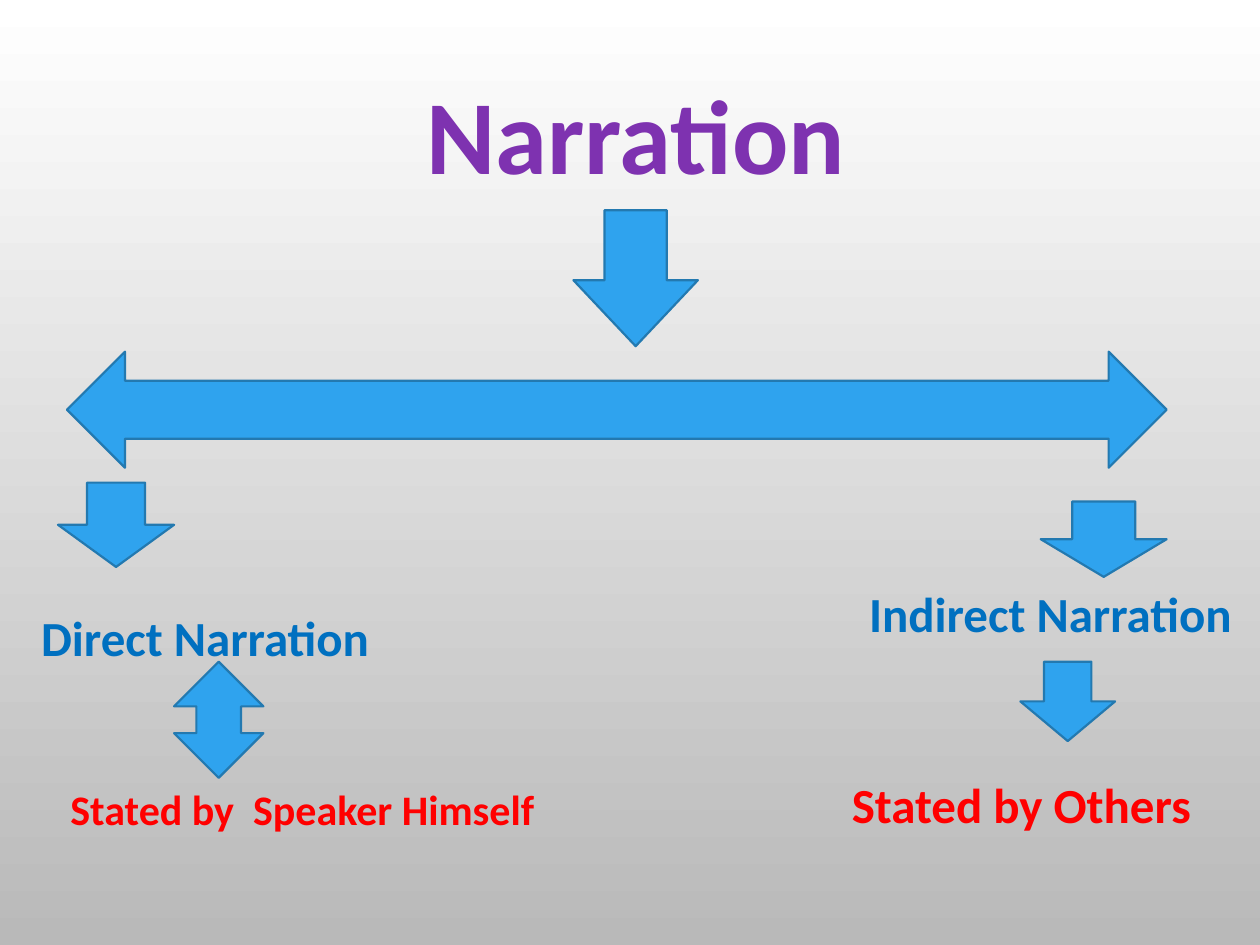
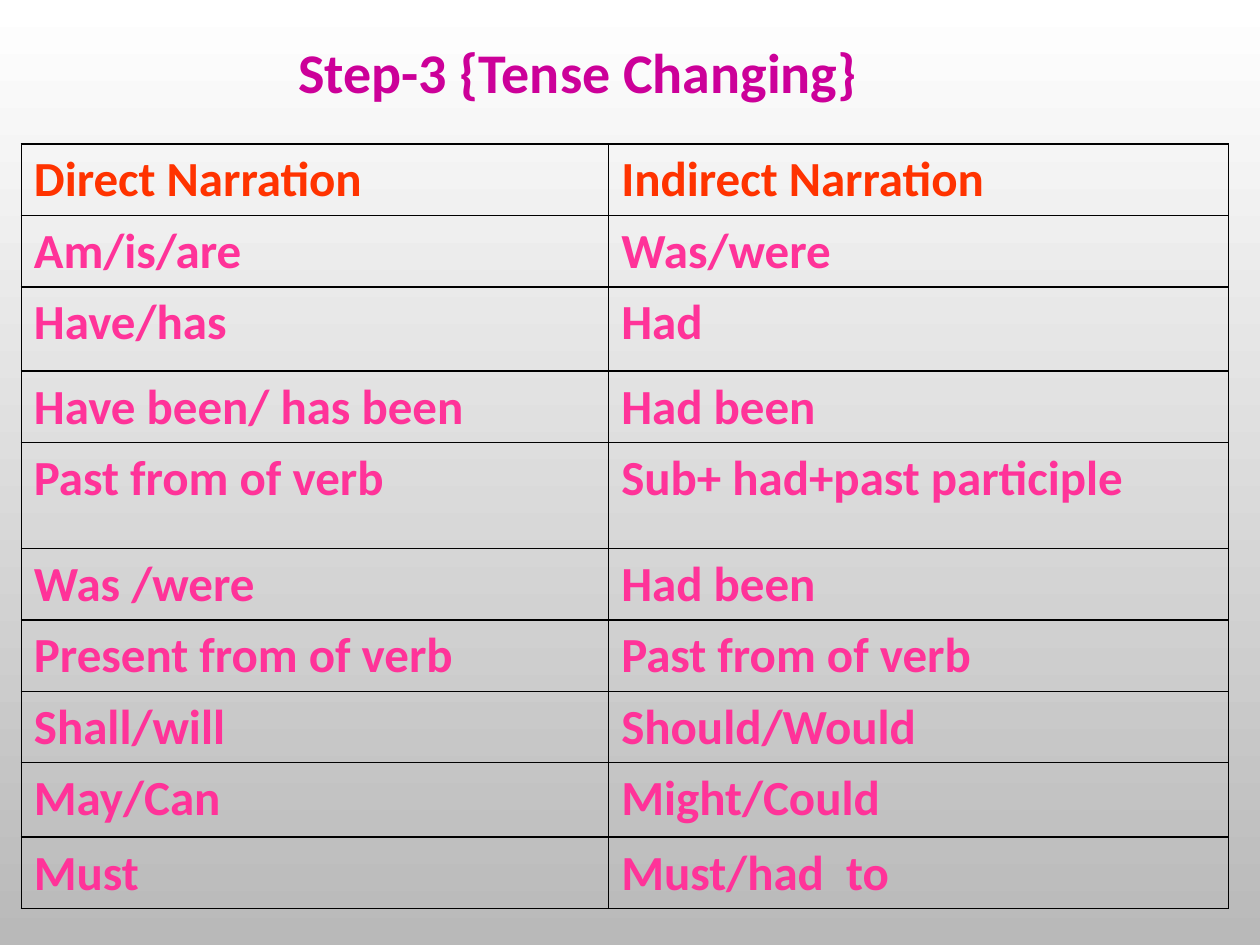
from dataclasses import dataclass

from lxml import etree
from pptx import Presentation
from pptx import util as u
from pptx.dml.color import RGBColor
from pptx.enum import shapes, text
from pptx.oxml.ns import qn

MS = shapes.MSO_SHAPE


@dataclass(frozen=True)
class Theme:
    font: str = "Calibri"
    bg: tuple = ("FFFFFF", "B9B9B9")
    arrow: str = "2FA3EE"
    arrow_line: str = "2379B0"
    topic: str = "7E32B0"
    branch: str = "0070C0"
    meaning: str = "FF0000"
    step: str = "CC0099"
    header: str = "FF3300"
    cell: str = "FF3399"
    border: str = "000000"
    topic_size: int = 60
    step_size: int = 32
    body_size: int = 28
    small_size: int = 24


T = Theme()

TENSES = [
    ("Direct Narration", "Indirect Narration"),
    ("Am/is/are", "Was/were"),
    ("Have/has", "Had"),
    ("Have been/ has been", "Had been"),
    ("Past from of verb", "Sub+ had+past participle"),
    ("Was /were", "Had been"),
    ("Present from of verb", "Past from of verb"),
    ("Shall/will", "Should/Would"),
    ("May/Can", "Might/Could"),
    ("Must", "Must/had  to"),
]


# Shared helpers: boxes are (left, top, width, height) in centimetres
def cm(box):
    return [u.Cm(v) for v in box]


def within(box, dx, dy, w, h):
    return box[0] + dx, box[1] + dy, w, h


def write(tf, words, size, color, align=text.PP_ALIGN.LEFT):
    p = tf.paragraphs[0]
    p.alignment = align
    r = p.add_run()
    r.text = words
    for name, value in {"name": T.font, "size": u.Pt(size), "bold": True}.items():
        setattr(r.font, name, value)
    r.font.color.rgb = RGBColor.from_string(color)


def label(s, box, words, size, color, align=text.PP_ALIGN.LEFT):
    tf = s.shapes.add_textbox(*cm(box)).text_frame
    tf.word_wrap = True
    write(tf, words, size, color, align)


def arrow(s, kind, box, adjustments=()):
    sp = s.shapes.add_shape(kind, *cm(box))
    sp.shadow.inherit = False
    sp.fill.solid()
    sp.fill.fore_color.rgb = RGBColor.from_string(T.arrow)
    sp.line.color.rgb = RGBColor.from_string(T.arrow_line)
    sp.line.width = u.Pt(1.25)
    for i, value in enumerate(adjustments):
        sp.adjustments[i] = value


def new_slide(prs):
    s = prs.slides.add_slide(prs.slide_layouts[6])
    fill = s.background.fill
    fill.gradient()
    fill.gradient_angle = 270
    for stop, color, position in zip(fill.gradient_stops, T.bg, (0, 1)):
        stop.color.rgb = RGBColor.from_string(color)
        stop.position = position
    return s


# Narration tree
def topic(s, box):
    label(s, within(box, 0.99, 0, 20.96, 2.82), "Narration",
          T.topic_size, T.topic, text.PP_ALIGN.CENTER)
    arrow(s, MS.DOWN_ARROW, within(box, 10.21, 2.97, 2.51, 2.74), (0.5, 0.53))
    arrow(s, MS.LEFT_RIGHT_ARROW, within(box, 0, 5.82, 22.17, 2.34))


def direct_branch(s, box):
    arrow(s, MS.DOWN_ARROW, within(box, 0.59, 0, 2.34, 1.7))
    label(s, within(box, 0, 2.39, 8.36, 1.45), "Direct Narration", T.body_size, T.branch)
    arrow(s, MS.UP_DOWN_ARROW, within(box, 2.93, 3.61, 1.8, 2.34))
    label(s, within(box, 0.59, 5.94, 10.39, 1.27), "Stated by  Speaker Himself",
          T.small_size, T.meaning)


def indirect_branch(s, box):
    arrow(s, MS.DOWN_ARROW, within(box, 5.05, 0, 2.54, 1.52))
    label(s, within(box, 1.34, 1.52, 8.1, 1.45), "Indirect Narration", T.body_size, T.branch)
    arrow(s, MS.DOWN_ARROW, within(box, 4.64, 3.23, 1.91, 1.6))
    label(s, within(box, 0, 5.38, 9.32, 1.45), "Stated by Others",
          T.body_size, T.meaning, text.PP_ALIGN.CENTER)


def narration_slide(prs):
    s = new_slide(prs)
    topic(s, (1.35, 1.27))
    direct_branch(s, (0.58, 9.73))
    indirect_branch(s, (15.93, 10.11))


# Tense table
def add_borders(cell):
    tc_pr = cell._tc.get_or_add_tcPr()
    for i, side in enumerate(("lnL", "lnR", "lnT", "lnB")):
        ln = etree.Element(qn(f"a:{side}"), w=str(u.Pt(1)))
        fill = etree.SubElement(ln, qn("a:solidFill"))
        etree.SubElement(fill, qn("a:srgbClr"), val=T.border)
        tc_pr.insert(i, ln)


def tense_table(s, box):
    heights = [1.44] * len(TENSES)
    heights[2], heights[4], heights[8] = 1.7, 2.13, 1.5
    table = s.shapes.add_table(len(TENSES), 2, *cm(box)).table
    table.first_row = table.horz_banding = False
    for col, width in zip(table.columns, (11.84, 12.5)):
        col.width = u.Cm(width)
    for i, (row, words) in enumerate(zip(table.rows, TENSES)):
        row.height = u.Cm(heights[i])
        for cell, entry in zip(row.cells, words):
            cell.fill.background()
            add_borders(cell)
            write(cell.text_frame, entry, T.body_size, T.cell if i else T.header)


def tense_slide(prs):
    s = new_slide(prs)
    label(s, (2.34, 0.64, 18.62, 1.63), "Step-3 {Tense Changing}",
          T.step_size, T.step, text.PP_ALIGN.CENTER)
    tense_table(s, (0.43, 2.9, 24.34, 15.4))


def main():
    prs = Presentation()
    prs.slide_width, prs.slide_height = u.Cm(25.4), u.Cm(19.05)
    narration_slide(prs)
    tense_slide(prs)
    prs.save("out.pptx")


if __name__ == "__main__":
    main()
